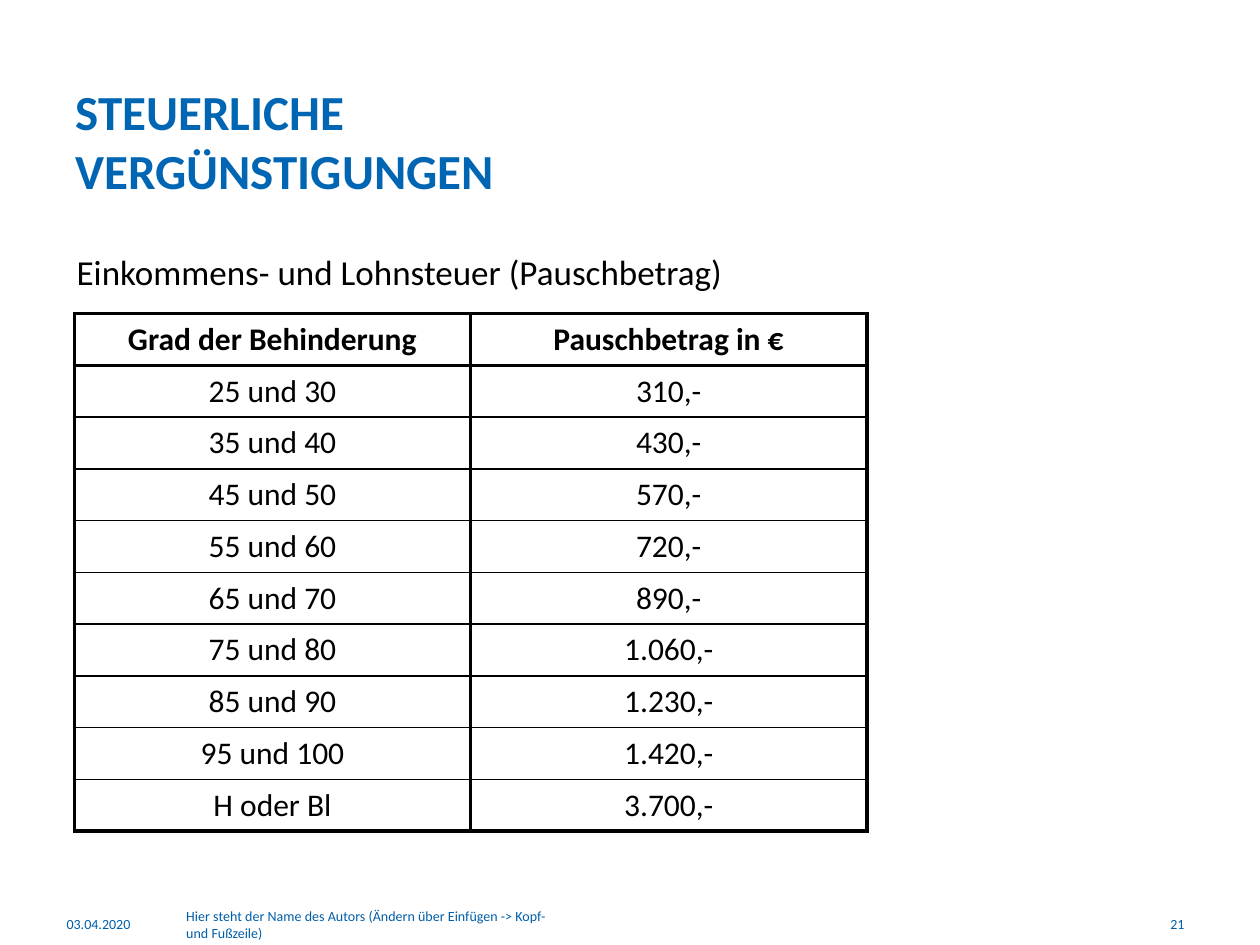
from lxml.etree import SubElement
from pptx import Presentation
from pptx.dml.color import RGBColor
from pptx.enum.text import MSO_ANCHOR, MSO_AUTO_SIZE, PP_ALIGN
from pptx.oxml.ns import qn
from pptx.util import Inches, Pt

FONT = "Calibri"
BLACK = "000000"
TITLE_BLUE = "0066B3"
FOOTER_BLUE = "005EA9"
THICK, THIN = 2.25, 1

ALLOWANCES = [
    ("Grad der Behinderung", "Pauschbetrag in €"),
    ("25 und 30", "310,-"),
    ("35 und 40", "430,-"),
    ("45 und 50", "570,-"),
    ("55 und 60", "720,-"),
    ("65 und 70", "890,-"),
    ("75 und 80", "1.060,-"),
    ("85 und 90", "1.230,-"),
    ("95 und 100", "1.420,-"),
    ("H oder Bl", "3.700,-"),
]


def color(value):
    return RGBColor.from_string(value)


def add_span(para, text, size, shade, bold=False):
    span = para.add_run()
    span.text = text
    span.font.name = FONT
    span.font.size = Pt(size)
    span.font.bold = bold
    span.font.color.rgb = color(shade)


def add_title(page, left, top, width, height, lines):
    title = page.shapes.title
    title.left, title.top = Inches(left), Inches(top)
    title.width, title.height = Inches(width), Inches(height)
    frame = title.text_frame
    frame.word_wrap = True
    frame.auto_size = MSO_AUTO_SIZE.NONE
    frame.vertical_anchor = MSO_ANCHOR.BOTTOM
    para = frame.paragraphs[0]
    para.alignment = PP_ALIGN.LEFT
    for index, line in enumerate(lines):
        if index:
            para.add_line_break()
        add_span(para, line, 28, TITLE_BLUE, bold=True)


def add_text(page, left, top, width, height, text, size, shade,
             anchor=MSO_ANCHOR.TOP, alignment=PP_ALIGN.LEFT):
    box = page.shapes.add_textbox(
        Inches(left), Inches(top), Inches(width), Inches(height))
    frame = box.text_frame
    frame.word_wrap = True
    frame.vertical_anchor = anchor
    para = frame.paragraphs[0]
    para.alignment = alignment
    add_span(para, text, size, shade)


def set_borders(cell, top, bottom):
    properties = cell._tc.get_or_add_tcPr()
    widths = {"lnL": THICK, "lnR": THICK, "lnT": top, "lnB": bottom}
    for position, (side, width) in enumerate(widths.items()):
        line = SubElement(properties, qn(f"a:{side}"), w=str(Pt(width)))
        fill = SubElement(line, qn("a:solidFill"))
        SubElement(fill, qn("a:srgbClr"), val=BLACK)
        properties.insert(position, line)


def fill_cell(cell, text, bold, top, bottom):
    cell.fill.background()
    cell.margin_left = cell.margin_right = Inches(0.07)
    cell.margin_top = cell.margin_bottom = Inches(0.05)
    cell.vertical_anchor = MSO_ANCHOR.MIDDLE
    para = cell.text_frame.paragraphs[0]
    para.alignment = PP_ALIGN.CENTER
    add_span(para, text, 18, BLACK, bold)
    set_borders(cell, top, bottom)


def add_allowance_table(page, left, top, width, height, rows):
    table = page.shapes.add_table(
        len(rows), len(rows[0]),
        Inches(left), Inches(top), Inches(width), Inches(height)).table
    table.horz_banding = False
    last = len(rows) - 1
    for row_index, row in enumerate(rows):
        upper = THICK if row_index <= 1 else THIN
        lower = THICK if row_index in (0, last) else THIN
        for column_index, text in enumerate(row):
            fill_cell(table.cell(row_index, column_index), text,
                      row_index == 0, upper, lower)


def add_footer(page, top, height):
    parts = [
        (0.43, 0.87, "03.04.2020", PP_ALIGN.LEFT),
        (1.38, 3.23, "Hier steht der Name des Autors "
         "(Ändern über Einfügen -> Kopf- und Fußzeile)", PP_ALIGN.LEFT),
        (7.17, 2.33, "21", PP_ALIGN.RIGHT),
    ]
    for left, width, text, alignment in parts:
        add_text(page, left, top, width, height, text, 8, FOOTER_BLUE,
                 MSO_ANCHOR.MIDDLE, alignment)


def main():
    deck = Presentation()
    deck.slide_width, deck.slide_height = Inches(10), Inches(7.5)
    page = deck.slides.add_slide(deck.slide_layouts.get_by_name("Title Only"))
    add_title(page, 0.5, 0.99, 7.26, 0.64, ["STEUERLICHE", "VERGÜNSTIGUNGEN"])
    add_allowance_table(page, 0.59, 2.49, 6.29, 4.11, ALLOWANCES)
    add_text(page, 0.51, 1.94, 5.35, 0.43,
             "Einkommens- und Lohnsteuer (Pauschbetrag)", 20, BLACK)
    add_footer(page, 7.21, 0.25)
    deck.save("out.pptx")


if __name__ == "__main__":
    main()
